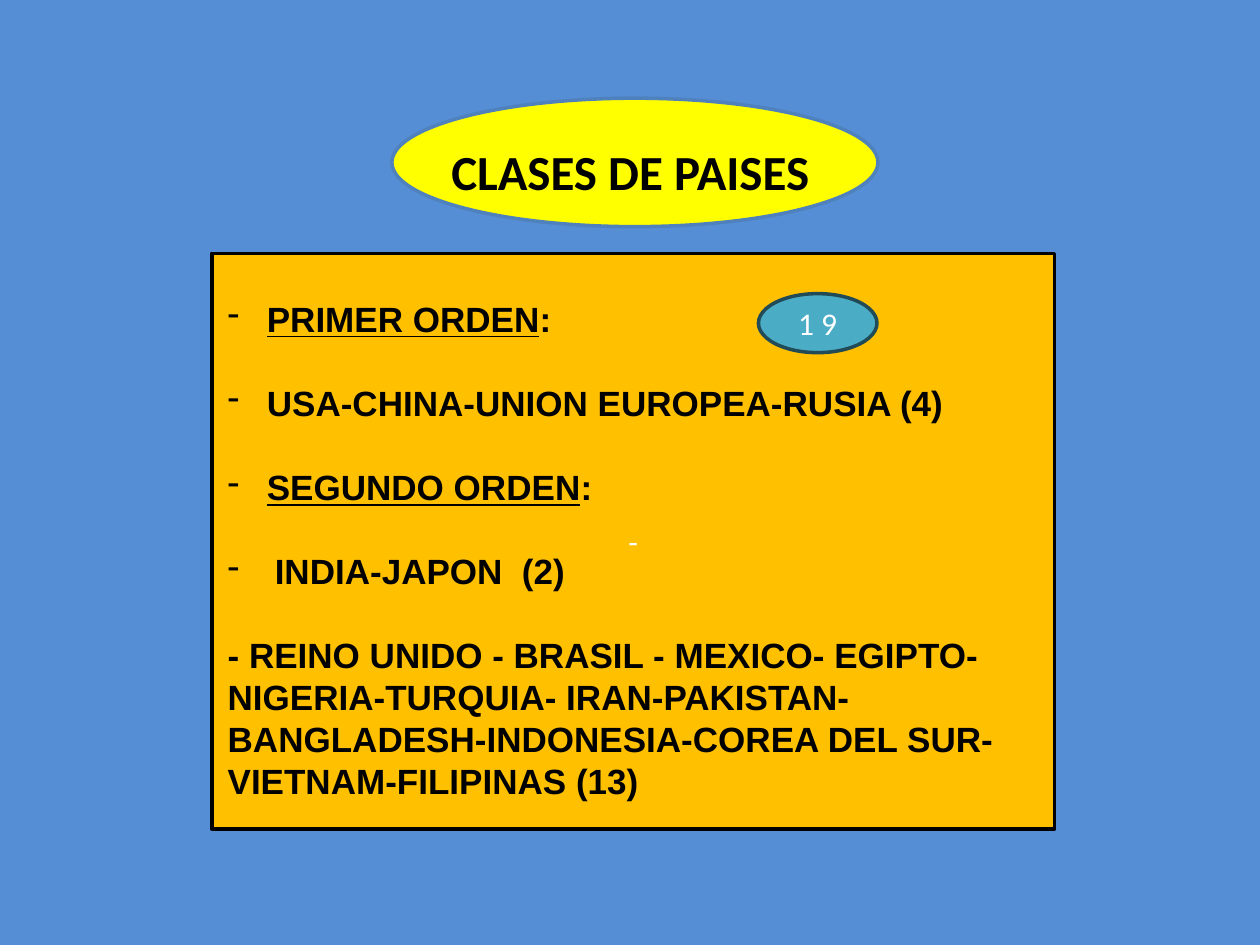
"""Build the slide that lists the classes of countries."""
import pptx
import pptx.dml.color
import pptx.enum.shapes
import pptx.enum.text
import pptx.oxml.ns
import pptx.util
import lxml.etree

Cm, Pt = pptx.util.Cm, pptx.util.Pt
SHAPE = pptx.enum.shapes.MSO_SHAPE
ALIGN = pptx.enum.text.PP_ALIGN


def rgb(color):
    return pptx.dml.color.RGBColor.from_string(color)


def add_text(p, text, font="Arial", size=20, color="000000", bold=False,
             underline=False, align=ALIGN.LEFT):
    p.alignment = align
    r = p.add_run()
    r.text = text
    r.font.name = font
    r.font.size = Pt(size)
    r.font.bold = bold
    r.font.underline = underline
    r.font.color.rgb = rgb(color)


prs = pptx.Presentation()
prs.slide_width, prs.slide_height = Cm(25.4), Cm(19.05)
s = prs.slides.add_slide(prs.slide_layouts[6])
s.background.fill.solid()
s.background.fill.fore_color.rgb = rgb("558ED5")

shapes = [
    (SHAPE.OVAL, 7.9, 1.98, 9.8, 2.59, "FFFF00", "4F81BD", ""),
    (SHAPE.RECTANGLE, 4.27, 5.11, 16.99, 11.6, "FFC000", "000000", "-"),
    (SHAPE.OVAL, 15.29, 5.92, 2.39, 1.19, "4BACC6", "214B57", "1 9"),
]
for kind, x, y, w, h, fill, line, text in shapes:
    sp = s.shapes.add_shape(kind, Cm(x), Cm(y), Cm(w), Cm(h))
    sp.shadow.inherit = False
    sp.fill.solid()
    sp.fill.fore_color.rgb = rgb(fill)
    sp.line.color.rgb = rgb(line)
    sp.line.width = Pt(2)
    if text:
        tf = sp.text_frame
        tf.vertical_anchor = pptx.enum.text.MSO_ANCHOR.MIDDLE
        add_text(tf.paragraphs[0], text, font="Calibri", size=18,
                 color="FFFFFF", align=ALIGN.CENTER)

tf = s.shapes.add_textbox(Cm(8.31), Cm(2.72), Cm(8.79), Cm(1.45)).text_frame
tf.word_wrap = True
add_text(tf.paragraphs[0], "CLASES DE PAISES", font="Calibri", size=28,
         bold=True, align=ALIGN.CENTER)

tf = s.shapes.add_textbox(Cm(4.34), Cm(5.11), Cm(16.92), Cm(12.9)).text_frame
tf.word_wrap = True
tf.margin_top = Cm(0.89)
countries = [
    ("PRIMER ORDEN", ":", 0.79),
    ("", "USA-CHINA-UNION EUROPEA-RUSIA (4)", 0.79),
    ("SEGUNDO ORDEN", ":", 0.79),
    ("", "INDIA-JAPON  (2)", 0.95),
    ("", "- REINO UNIDO - BRASIL - MEXICO- EGIPTO-NIGERIA-TURQUIA- "
         "IRAN-PAKISTAN-BANGLADESH-INDONESIA-COREA DEL SUR-"
         "VIETNAM-FILIPINAS (13)", 0),
]
for i, (heading, text, indent) in enumerate(countries):
    p = tf.add_paragraph() if i else tf.paragraphs[0]
    p.line_spacing = Pt(24)
    p.space_after = Pt(24)
    if indent:
        pPr = p._p.get_or_add_pPr()
        pPr.set("marL", str(Cm(indent)))
        pPr.set("indent", str(-Cm(indent)))
        bullet = lxml.etree.SubElement(pPr, pptx.oxml.ns.qn("a:buChar"))
        bullet.set("char", "-")
    if heading:
        add_text(p, heading, bold=True, underline=True)
    add_text(p, text, bold=True)

prs.save("out.pptx")
